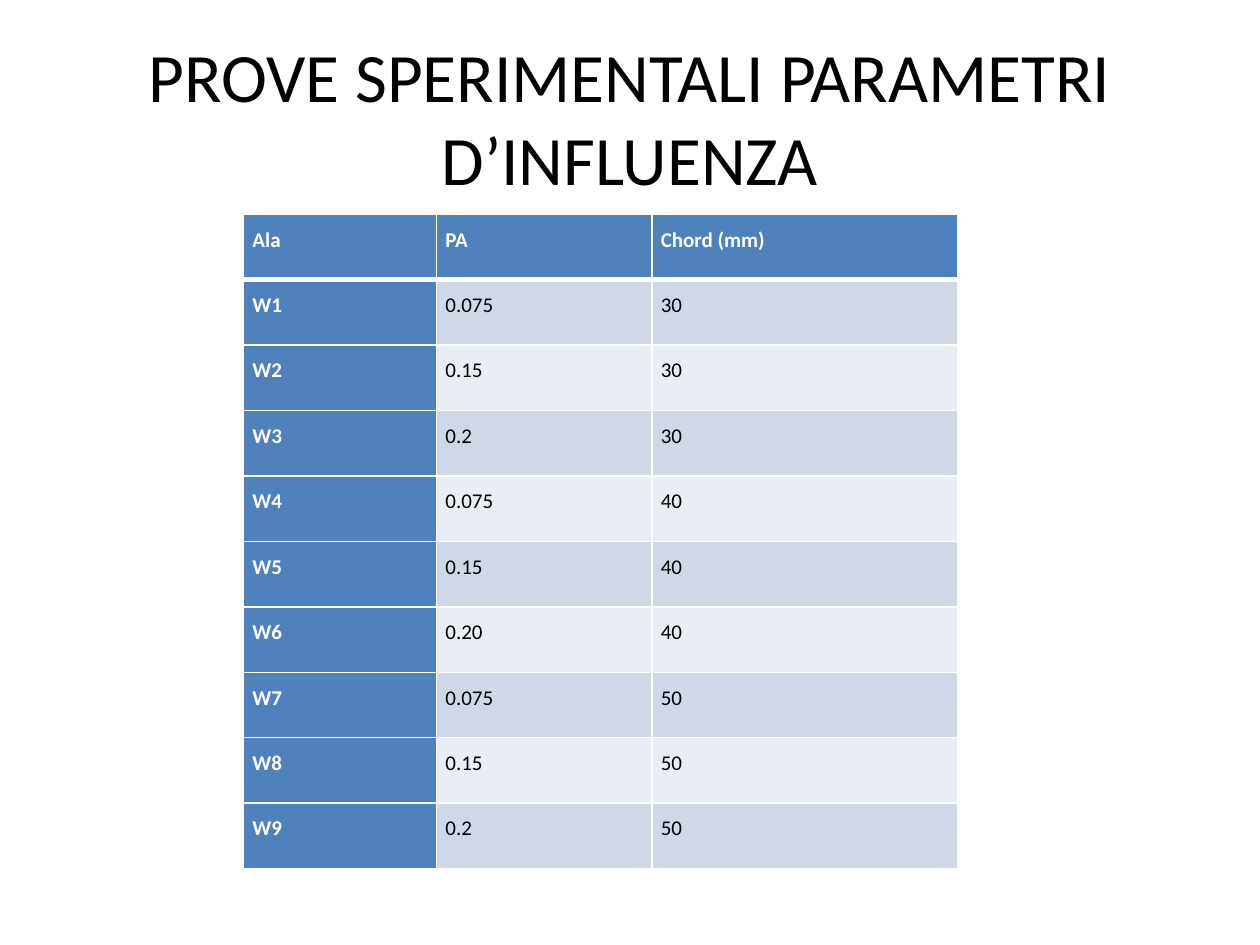
from lxml.etree import SubElement
from pptx import Presentation
from pptx.dml.color import RGBColor
from pptx.enum.text import MSO_ANCHOR as Anchor, MSO_AUTO_SIZE as AutoSize, PP_ALIGN as Align
from pptx.oxml.ns import qn
from pptx.util import Cm, Pt

FONT = "Calibri"
COLORS = {
    "text": "000000",
    "white": "FFFFFF",
    "header": "4F81BD",
    "odd": "D0D8E8",
    "even": "E9EDF4",
}
COLUMN_WIDTHS = [3.89, 4.34, 6.17]
HEADINGS = ["Ala", "PA", "Chord (mm)"]
WINGS = [
    ["W1", "0.075", "30"],
    ["W2", "0.15", "30"],
    ["W3", "0.2", "30"],
    ["W4", "0.075", "40"],
    ["W5", "0.15", "40"],
    ["W6", "0.20", "40"],
    ["W7", "0.075", "50"],
    ["W8", "0.15", "50"],
    ["W9", "0.2", "50"],
]


def color(name):
    return RGBColor.from_string(COLORS[name])


def add_span(para, text, size, color_name, bold=False):
    span = para.add_run()
    span.text = text
    span.font.name = FONT
    span.font.size = Pt(size)
    span.font.bold = bold
    span.font.color.rgb = color(color_name)


def set_borders(cell, widths):
    """Draw white borders; widths are points for left, right, top, bottom."""
    properties = cell._tc.get_or_add_tcPr()
    for index, (side, width) in enumerate(zip("LRTB", widths)):
        line = SubElement(properties, qn(f"a:ln{side}"), w=str(Pt(width)))
        fill = SubElement(line, qn("a:solidFill"))
        SubElement(fill, qn("a:srgbClr"), val=COLORS["white"])
        properties.insert(index, line)  # borders come before the cell fill


def place_title(page, left, top, width, height):
    title = page.shapes.title
    title.left, title.top, title.width, title.height = map(Cm, (left, top, width, height))
    frame = title.text_frame
    frame.word_wrap = True
    frame.auto_size = AutoSize.NONE
    frame.vertical_anchor = Anchor.MIDDLE
    para = frame.paragraphs[0]
    para.alignment = Align.CENTER
    add_span(para, "PROVE SPERIMENTALI PARAMETRI D’INFLUENZA", 39.6, "text")


def format_cell(cell, text, row, column):
    is_heading = row == 0 or column == 0
    fill_name = "header" if is_heading else "odd" if row % 2 else "even"
    cell.fill.solid()
    cell.fill.fore_color.rgb = color(fill_name)
    cell.margin_left = cell.margin_right = Cm(0.18)
    cell.margin_top = cell.margin_bottom = 0
    # A thick rule separates the header from the body
    set_borders(cell, [1, 1, 3 if row == 1 else 1, 3 if row == 0 else 1])
    para = cell.text_frame.paragraphs[0]
    para.alignment = Align.JUSTIFY
    para.line_spacing = 1.5
    add_span(para, text, 12, "white" if is_heading else "text", is_heading)


def place_wing_table(page, left, top, width, height):
    rows = [HEADINGS, *WINGS]
    table = page.shapes.add_table(
        len(rows), len(HEADINGS), Cm(left), Cm(top), Cm(width), Cm(height)
    ).table
    for column, column_width in zip(table.columns, COLUMN_WIDTHS):
        column.width = Cm(column_width)
    for row, values in enumerate(rows):
        table.rows[row].height = Cm(height / len(rows))
        for column, text in enumerate(values):
            format_cell(table.cell(row, column), text, row, column)


def main():
    deck = Presentation()
    deck.slide_width, deck.slide_height = Cm(25.4), Cm(19.05)
    page = deck.slides.add_slide(deck.slide_layouts[5])
    place_title(page, 1.27, 0.76, 22.86, 3.18)
    place_wing_table(page, 4.91, 4.32, sum(COLUMN_WIDTHS), 13.2)
    deck.save("out.pptx")


if __name__ == "__main__":
    main()
